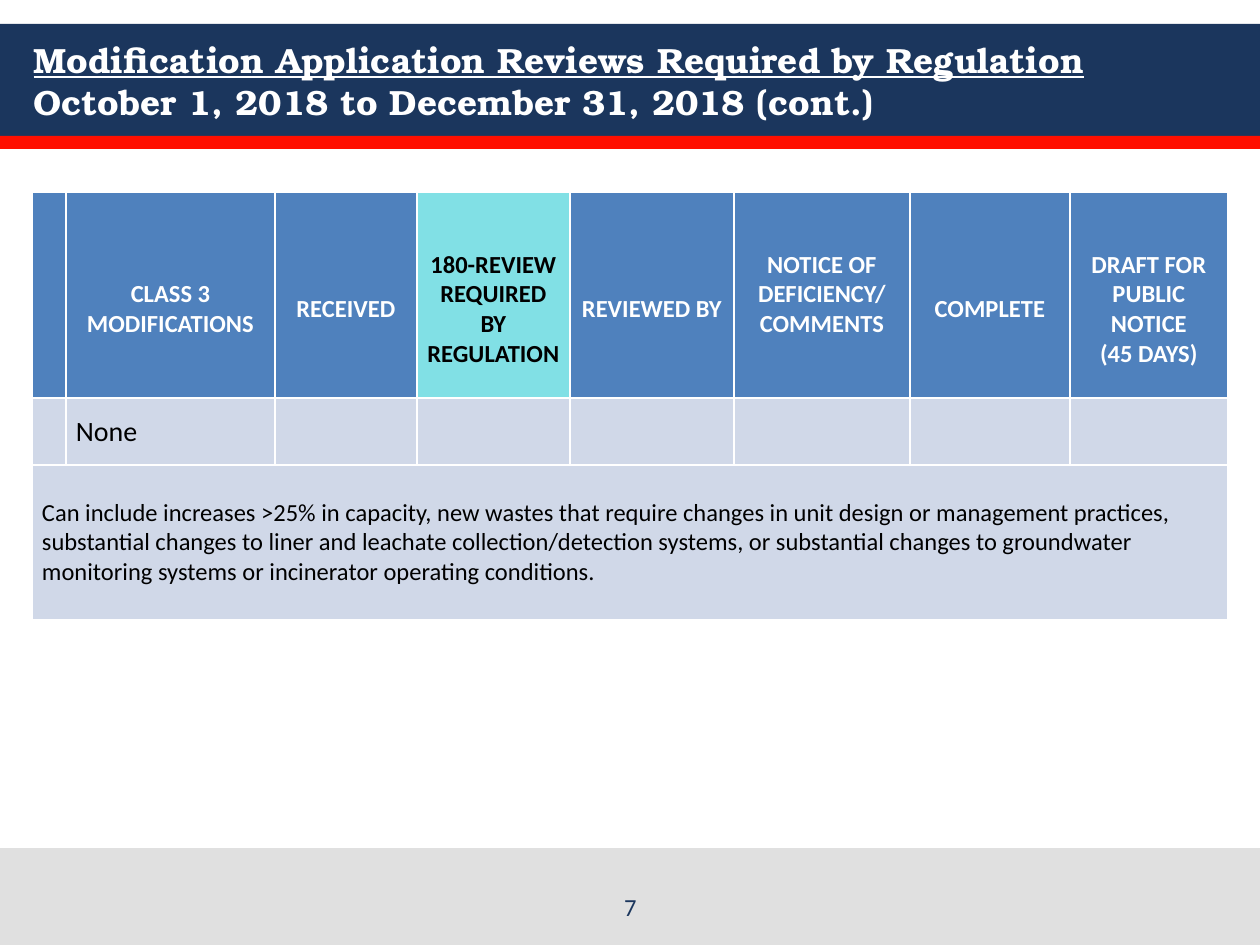
"""Build the slide on Class 3 modification application reviews."""
from lxml import etree
from pptx import Presentation
from pptx.dml.color import RGBColor
from pptx.enum.shapes import MSO_SHAPE
from pptx.enum.text import MSO_ANCHOR, MSO_AUTO_SIZE, PP_ALIGN
from pptx.oxml.ns import qn
from pptx.util import Emu, Pt

RECTANGLE = MSO_SHAPE.RECTANGLE
MIDDLE, BOTTOM = MSO_ANCHOR.MIDDLE, MSO_ANCHOR.BOTTOM
LEFT, CENTER = PP_ALIGN.LEFT, PP_ALIGN.CENTER
NO_AUTOFIT = MSO_AUTO_SIZE.NONE

NAVY, RED, GREY = "1B365D", "FF0F00", "E0E0E0"
BLUE, AQUA, PALE = "4F81BD", "81E0E5", "D0D8E8"
WHITE, BLACK = "FFFFFF", "000000"
PX_PER_INCH = 126
COLUMN_WIDTHS = [34, 209, 142, 153, 164, 176, 160, 158]
ROW_HEIGHTS = [207, 67, 155]
HEADER_DROP = 30

HEADERS = [
    ("", 0),
    ("CLASS 3 MODIFICATIONS", HEADER_DROP),
    ("RECEIVED", HEADER_DROP),
    ("180-REVIEW REQUIRED BY REGULATION", HEADER_DROP),
    ("REVIEWED BY", HEADER_DROP),
    ("NOTICE OF DEFICIENCY/ COMMENTS", 0),
    ("COMPLETE", HEADER_DROP),
    ("DRAFT FOR PUBLIC NOTICE\n(45 DAYS)", HEADER_DROP),
]
HIGHLIGHTED_COLUMN = 3
EXPLANATION = [
    "Can include increases >25% in capacity, new wastes that require changes "
    "in unit design or management practices,",
    "substantial changes to liner and leachate collection/detection systems, "
    "or substantial changes to groundwater monitoring systems or incinerator "
    "operating conditions.",
]


def px(length):
    return Emu(round(length * 914400 / PX_PER_INCH))


def color(hex_string):
    return RGBColor.from_string(hex_string)


class SlideBuilder:
    def __init__(self, slide, title_font="TeX Gyre Bonum", body_font="Calibri"):
        self.slide = slide
        self.title_font = title_font
        self.body_font = body_font

    def run(self, paragraph, text, size, fill, bold=False, font=None, underline=False):
        run = paragraph.add_run()
        run.text = text
        run.font.name = font or self.body_font
        run.font.size = Pt(size)
        run.font.bold = bold
        run.font.underline = underline
        run.font.color.rgb = color(fill)

    def band(self, top, height, fill):
        band = self.slide.shapes.add_shape(RECTANGLE, 0, px(top), px(1260), px(height))
        band.shadow.inherit = False
        band.fill.solid()
        band.fill.fore_color.rgb = color(fill)
        band.line.fill.background()

    def title(self, heading, period, left, top, width, height):
        title = self.slide.shapes.title
        title.left, title.top = px(left), px(top)
        title.width, title.height = px(width), px(height)
        self.slide.shapes._spTree.append(title._element)
        frame = title.text_frame
        frame.auto_size = NO_AUTOFIT
        frame.vertical_anchor = MIDDLE
        paragraph = frame.paragraphs[0]
        paragraph.alignment = LEFT
        self.run(paragraph, heading, 20, WHITE, True, self.title_font, True)
        paragraph.add_line_break()
        self.run(paragraph, period, 20, WHITE, True, self.title_font)

    def table(self, left, top, widths, heights):
        table = self.slide.shapes.add_table(
            len(heights), len(widths), px(left), px(top),
            px(sum(widths)), px(sum(heights))).table
        for column, width in zip(table.columns, widths):
            column.width = px(width)
        for row, height in zip(table.rows, heights):
            row.height = px(height)
        return table

    def cell(self, cell, fill, paragraphs=(), size=14, ink=BLACK, bold=False,
             align=LEFT, drop=0, top_border=1):
        for side, width in (("L", 1), ("R", 1), ("T", top_border), ("B", 1)):
            border = etree.SubElement(cell._tc.get_or_add_tcPr(), qn(f"a:ln{side}"),
                                      w=str(Pt(width)))
            solid = etree.SubElement(border, qn("a:solidFill"))
            etree.SubElement(solid, qn("a:srgbClr"), val=WHITE)
        cell.fill.solid()
        cell.fill.fore_color.rgb = color(fill)
        cell.vertical_anchor = MIDDLE
        cell.margin_left = cell.margin_right = px(10)
        cell.margin_top, cell.margin_bottom = px(drop), 0
        frame = cell.text_frame
        for index, text in enumerate(paragraphs):
            paragraph = frame.add_paragraph() if index else frame.paragraphs[0]
            paragraph.alignment = align
            for number, line in enumerate(text.split("\n")):
                if number:
                    paragraph.add_line_break()
                self.run(paragraph, line, size, ink, bold)

    def page_number(self, number, left, top, width, height):
        frame = self.slide.shapes.add_textbox(
            px(left), px(top), px(width), px(height)).text_frame
        frame.word_wrap = True
        frame.vertical_anchor = BOTTOM
        frame.paragraphs[0].alignment = CENTER
        self.run(frame.paragraphs[0], number, 14, NAVY)


def main():
    presentation = Presentation()
    presentation.slide_width, presentation.slide_height = px(1260), px(945)
    builder = SlideBuilder(presentation.slides.add_slide(presentation.slide_layouts[5]))

    for top, height, fill in ((24, 112, NAVY), (136, 13, RED), (848, 97, GREY)):
        builder.band(top, height, fill)
    builder.title("Modification Application Reviews Required by Regulation",
                  "October 1, 2018 to December 31, 2018 (cont.)", 21, 24, 1218, 113)

    reviews = builder.table(32, 191, COLUMN_WIDTHS, ROW_HEIGHTS)
    for column, (header, drop) in enumerate(HEADERS):
        highlighted = column == HIGHLIGHTED_COLUMN
        builder.cell(reviews.cell(0, column), AQUA if highlighted else BLUE,
                     [header] if header else [], ink=BLACK if highlighted else WHITE,
                     bold=True, align=CENTER, drop=drop, top_border=3)
        builder.cell(reviews.cell(1, column), PALE,
                     ["None"] if column == 1 else [], size=16)
        builder.cell(reviews.cell(2, column), PALE, [] if column else EXPLANATION)
    reviews.cell(2, 0).merge(reviews.cell(2, len(HEADERS) - 1))

    builder.page_number("7", 431, 878, 399, 50)
    presentation.save("out.pptx")


if __name__ == "__main__":
    main()
